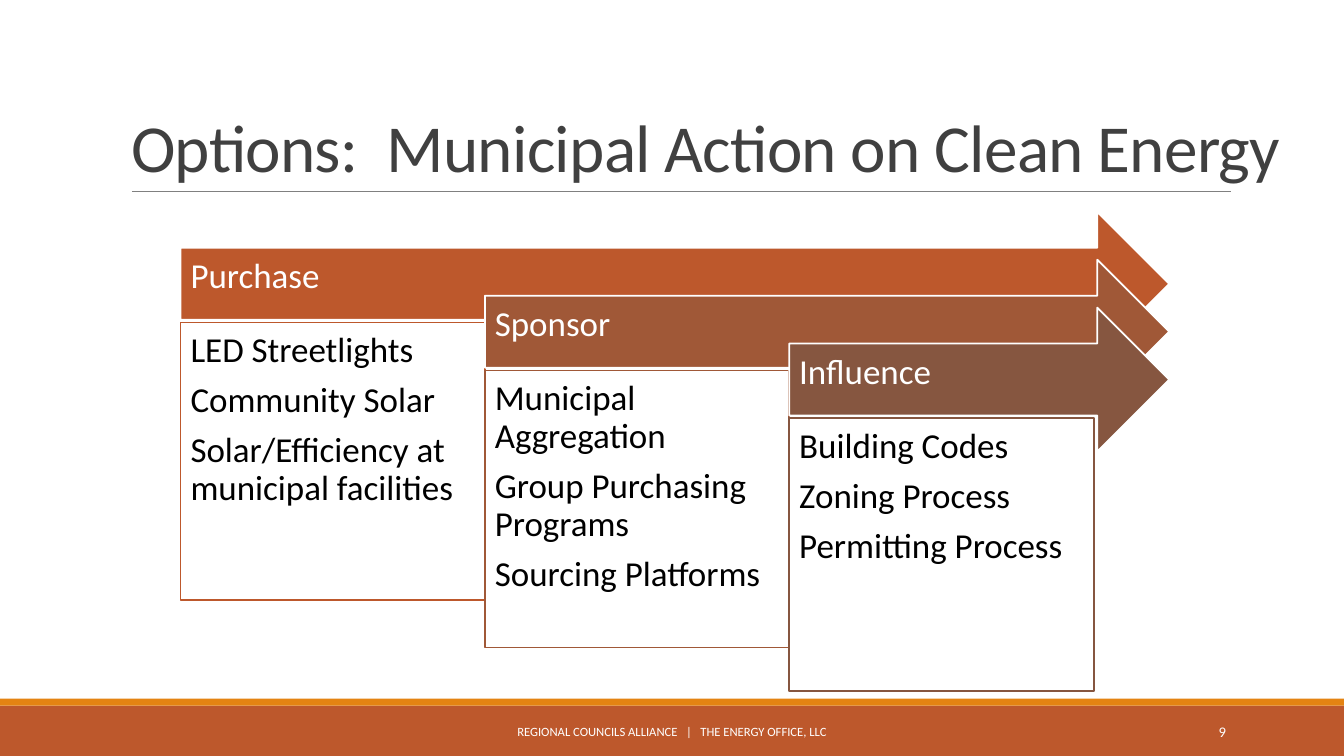
from lxml import etree
from pptx import Presentation
from pptx.dml.color import RGBColor
from pptx.enum.shapes import MSO_CONNECTOR as Connector, MSO_SHAPE as Shape
from pptx.enum.text import MSO_ANCHOR as Anchor, MSO_AUTO_SIZE as AutoSize, PP_ALIGN as Align
from pptx.oxml.ns import qn
from pptx.util import Pt

COLORS = {
    "white": "FFFFFF", "black": "000000", "title": "404040", "rule": "808080",
    "stripe": "E48312", "rust": "BD582C", "sienna": "A05837", "umber": "865640",
}
STAGES = [
    ("Purchase", "rust", 198,
     ["LED Streetlights", "Community Solar", "Solar/Efficiency at municipal facilities"]),
    ("Sponsor", "sienna", 198,
     ["Municipal Aggregation", "Group Purchasing Programs", "Sourcing Platforms"]),
    ("Influence", "umber", 195,
     ["Building Codes", "Zoning Process", "Permitting Process"]),
]
STAGE_LEFT, STAGE_TOP, STAGE_RIGHT = 129, 151.3, 835.2
STEP_DOWN, ARROW_HEIGHT, BOX_OFFSET, BOX_WIDTH = 34.2, 102.8, 79.1, 217.4


class SlideBuilder:
    """Holds the style and the current slide, and adds each kind of element."""

    def __init__(self, slide, font="Calibri"):
        self.slide = slide
        self.font = font

    def color(self, name):
        return RGBColor.from_string(COLORS[name])

    def set_text(self, shape, lines, size, color, align=Align.LEFT, anchor=Anchor.TOP,
                 insets=(7.2, 3.6, 7.2, 3.6), line_spacing=1.0, space_after=0):
        frame = shape.text_frame
        frame.text = "\n".join(lines)
        frame.word_wrap = True
        frame.auto_size = AutoSize.NONE
        frame.vertical_anchor = anchor
        (frame.margin_left, frame.margin_top,
         frame.margin_right, frame.margin_bottom) = map(Pt, insets)
        for paragraph in frame.paragraphs:
            paragraph.alignment = align
            paragraph.line_spacing = line_spacing
            paragraph.space_before = Pt(0)
            paragraph.space_after = Pt(space_after)
            for run in paragraph.runs:
                run.font.name = self.font
                run.font.size = Pt(size)
                run.font.color.rgb = self.color(color)

    def title(self, text, left, top, width, height):
        shape = self.slide.shapes.title
        shape.left, shape.top, shape.width, shape.height = map(Pt, (left, top, width, height))
        self.set_text(shape, [text], 48, "title", anchor=Anchor.BOTTOM, line_spacing=0.85)
        for run in shape.text_frame.paragraphs[0].runs:
            run._r.get_or_add_rPr().set("spc", "-50")

    def shape(self, kind, left, top, width, height, fill, line=None):
        shape = self.slide.shapes.add_shape(kind, *map(Pt, (left, top, width, height)))
        shape.shadow.inherit = False
        shape.fill.solid()
        shape.fill.fore_color.rgb = self.color(fill)
        if line:
            shape.line.color.rgb = self.color(line)
            shape.line.width = Pt(1.25)
        else:
            shape.line.fill.background()
        return shape

    def rule(self, left, right, y):
        connector = self.slide.shapes.add_connector(
            Connector.STRAIGHT, Pt(left), Pt(y), Pt(right), Pt(y))
        connector.line.color.rgb = self.color("rule")
        connector.line.width = Pt(0.5)
        etree.SubElement(connector._element.spPr, qn("a:effectLst"))

    def label(self, text, left, top, width, height, size, align):
        box = self.slide.shapes.add_textbox(*map(Pt, (left, top, width, height)))
        self.set_text(box, [text], size, "white", align, Anchor.MIDDLE)

    def stage(self, name, color, box_height, actions, left, top):
        arrow = self.shape(Shape.RIGHT_ARROW, left, top, STAGE_RIGHT - left, ARROW_HEIGHT,
                           color, "white")
        self.set_text(arrow, [name], 25, "white", anchor=Anchor.MIDDLE,
                      insets=(7.2, 7.2, 20, 16.3), line_spacing=0.9, space_after=8.75)
        box = self.shape(Shape.RECTANGLE, left, top + BOX_OFFSET, BOX_WIDTH, box_height,
                         "white", color)
        self.set_text(box, actions, 25, "black", insets=(7.2,) * 4,
                      line_spacing=0.9, space_after=8.75)


def main():
    presentation = Presentation()
    presentation.slide_width, presentation.slide_height = Pt(960), Pt(540)
    builder = SlideBuilder(presentation.slides.add_slide(presentation.slide_layouts[5]))
    builder.shape(Shape.RECTANGLE, 0, 504, 960, 36, "rust")
    builder.shape(Shape.RECTANGLE, 0, 499, 960, 5, "stripe")
    builder.rule(94.3, 879.1, 136.8)
    builder.title("Options:  Municipal Action on Clean Energy", 86.4, 22.3, 836.6, 114.5)
    for index, stage in enumerate(STAGES):
        builder.stage(*stage, STAGE_LEFT + index * BOX_WIDTH, STAGE_TOP + index * STEP_DOWN)
    builder.label("REGIONAL COUNCILS ALLIANCE   |   THE ENERGY OFFICE, LLC",
                  290.2, 508.3, 379.4, 28.8, 9, Align.CENTER)
    builder.label("9", 779.8, 508.3, 103, 28.8, 10.5, Align.RIGHT)
    presentation.save("out.pptx")


if __name__ == "__main__":
    main()
